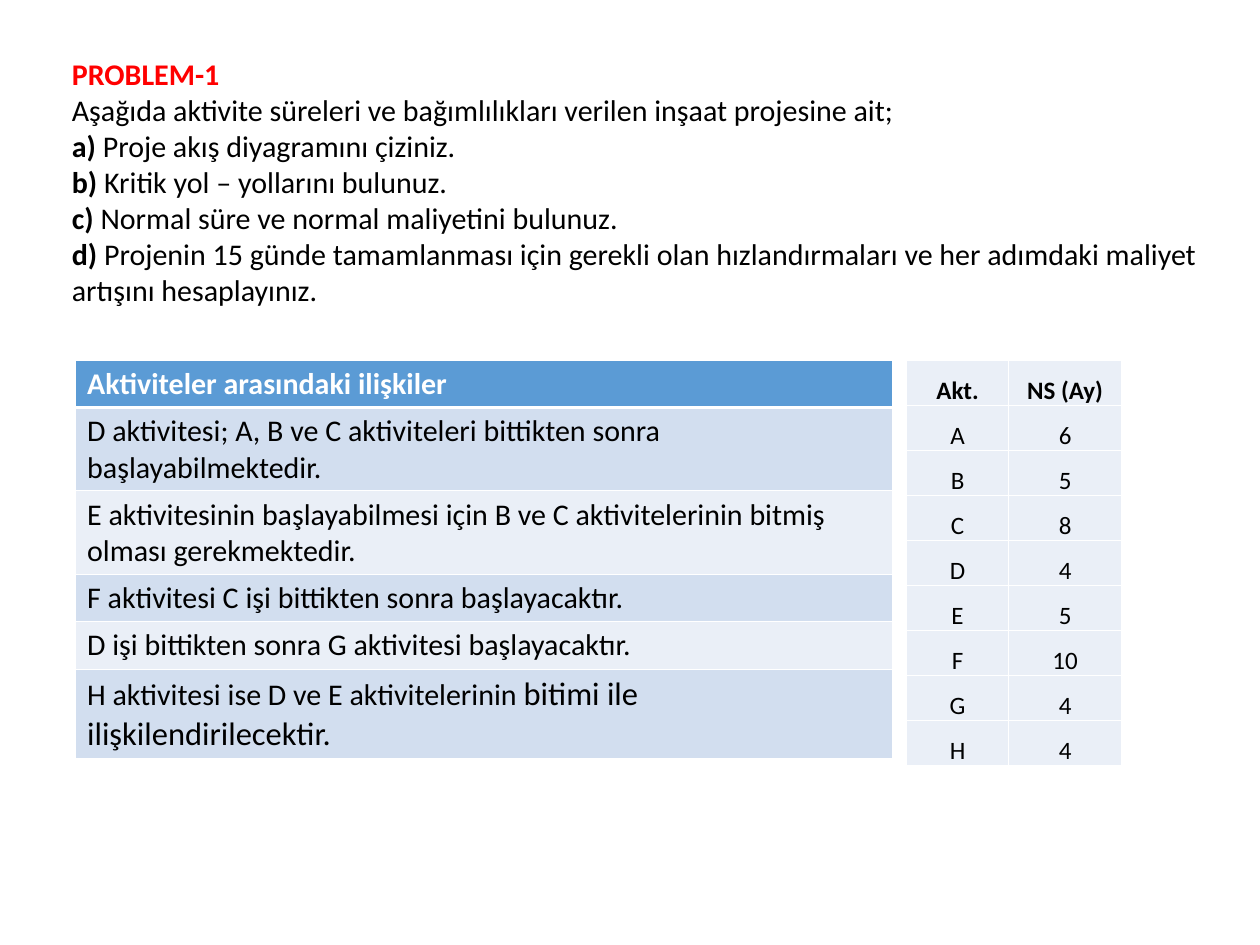
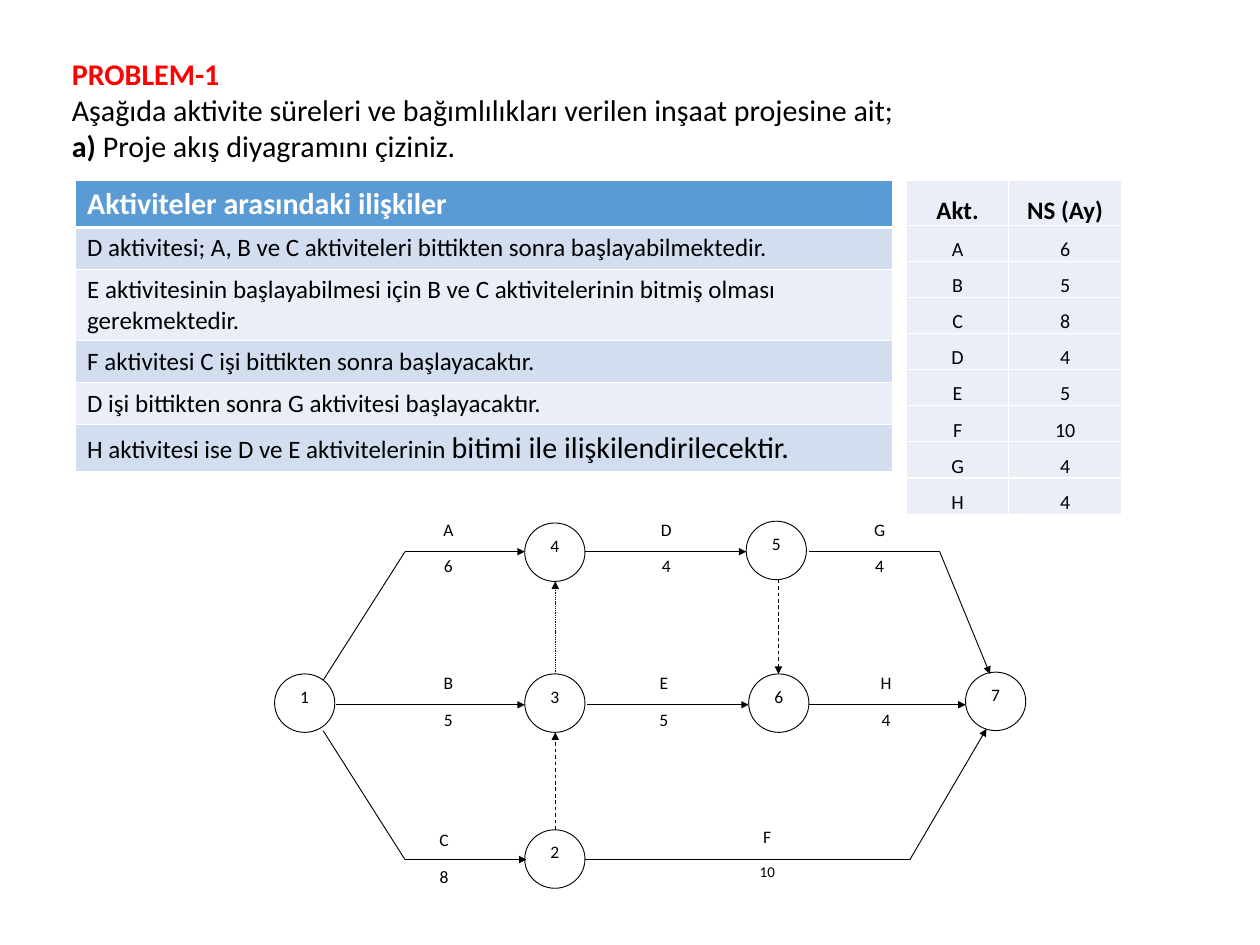
from lxml import etree
from pptx import Presentation
from pptx import util as u
from pptx.dml.color import RGBColor
from pptx.enum import dml, shapes, text
from pptx.oxml.ns import qn

FONT = "Calibri"
COLORS = {
    "red": "FF0000",
    "black": "000000",
    "white": "FFFFFF",
    "header": "5B9BD5",
    "band": "D2DEEF",
    "pale": "EAEFF7",
}
TITLE = "PROBLEM-1"
INTRO = "Aşağıda aktivite süreleri ve bağımlılıkları verilen inşaat projesine ait;"
QUESTIONS = [
    ("a) ", "Proje akış diyagramını çiziniz."),
    ("b) ", "Kritik yol – yollarını bulunuz."),
    ("c) ", "Normal süre ve normal maliyetini bulunuz."),
    ("d) ", "Projenin 15 günde tamamlanması için gerekli olan hızlandırmaları "
            "ve her adımdaki maliyet artışını hesaplayınız."),
]
RELATIONS = [
    ("Aktiviteler arasındaki ilişkiler",),
    ("D aktivitesi; A, B ve C aktiviteleri bittikten sonra başlayabilmektedir.",),
    ("E aktivitesinin başlayabilmesi için B ve C aktivitelerinin bitmiş olması "
     "gerekmektedir.",),
    ("F aktivitesi C işi bittikten sonra başlayacaktır.",),
    ("D işi bittikten sonra G aktivitesi başlayacaktır.",),
    ("H aktivitesi ise D ve E aktivitelerinin ", "bitimi ile ilişkilendirilecektir."),
]
DURATIONS = {"A": 6, "B": 5, "C": 8, "D": 4, "E": 5, "F": 10, "G": 4, "H": 4}

NODE_WIDTH, NODE_HEIGHT = 1.7, 1.65
NODES = {
    "1": (7.75, 19.02),
    "2": (14.81, 23.42),
    "3": (14.81, 19.02),
    "4": (14.81, 14.76),
    "5": (21.06, 14.71),
    "6": (21.13, 19.02),
    "7": (27.25, 18.97),
}
TOP, MIDDLE, BOTTOM = 15.57, 19.89, 24.26
BEND = 11.43
PLAIN_LINES = [
    (9.12, 19.2, BEND, TOP),
    (9.12, 20.62, BEND, BOTTOM),
    (16.51, BOTTOM, 25.68, BOTTOM),
    (22.83, TOP, 26.52, TOP),
]
ARROWS = [
    (BEND, TOP, 14.81, TOP),
    (9.47, MIDDLE, 14.81, MIDDLE),
    (BEND, BOTTOM, 14.86, BOTTOM),
    (16.51, TOP, 21.06, TOP),
    (16.58, MIDDLE, 21.13, MIDDLE),
    (22.83, MIDDLE, 27.25, MIDDLE),
    (25.68, BOTTOM, 27.84, 20.57),
    (26.52, TOP, 27.94, 19.02),
]
DUMMY_ARROWS = [
    (15.67, 23.42, 15.67, 20.67, 0.75),
    (15.67, 19.02, 15.67, 16.41, 0.25),
    (21.97, 16.36, 21.97, 19.02, 0.75),
]
ACTIVITY_LABELS = {
    "A": (11.4, 14.43),
    "B": (11.4, 18.75),
    "C": (11.28, 23.19),
    "D": (17.55, 14.43),
    "E": (17.48, 18.75),
    "F": (20.4, 23.11),
    "G": (23.57, 14.43),
    "H": (23.75, 18.75),
}


def rgb(name):
    """Return the named colour."""
    return RGBColor.from_string(COLORS[name])


def style_paragraph(para, size, color="black", bold=False):
    """Set the font of a paragraph."""
    para.font.name = FONT
    para.font.size = u.Pt(size)
    para.font.bold = bold
    para.font.color.rgb = rgb(color)


def space_paragraph(para, line_spacing):
    """Centre a paragraph and set its spacing."""
    para.alignment = text.PP_ALIGN.CENTER
    para.line_spacing = line_spacing
    para.space_after = u.Pt(10)


def add_problem(page, questions, height):
    """Add the problem title, its introduction and the questions."""
    box = page.shapes.add_textbox(u.Cm(1.78), u.Cm(1.45), u.Cm(32.77), u.Cm(height))
    frame = box.text_frame
    frame.word_wrap = True
    frame.auto_size = text.MSO_AUTO_SIZE.SHAPE_TO_FIT_TEXT
    title = frame.paragraphs[0]
    title.text = TITLE
    title.alignment = text.PP_ALIGN.JUSTIFY
    style_paragraph(title, 24, "red", True)
    intro = frame.add_paragraph()
    intro.text = INTRO
    style_paragraph(intro, 24)
    for letter, question in questions:
        para = frame.add_paragraph()
        style_paragraph(para, 24)
        span = para.add_run()
        span.text = letter
        span.font.bold = True
        para.add_run().text = question


def set_borders(cell, top=1, bottom=1):
    """Give a cell white borders, with widths in points."""
    properties = cell._tc.get_or_add_tcPr()
    widths = {"lnL": 1, "lnR": 1, "lnT": top, "lnB": bottom}
    for index, (tag, width) in enumerate(widths.items()):
        line = etree.Element(qn(f"a:{tag}"), w=str(u.Pt(width)))
        fill = etree.SubElement(line, qn("a:solidFill"))
        etree.SubElement(fill, qn("a:srgbClr"), val=COLORS["white"])
        properties.insert(index, line)


def format_cell(cell, color, side, edge):
    """Set the fill and the margins of a cell."""
    cell.fill.solid()
    cell.fill.fore_color.rgb = rgb(color)
    cell.margin_left = cell.margin_right = u.Cm(side)
    cell.margin_top = cell.margin_bottom = u.Cm(edge)


def add_grid(page, left, top, widths, heights):
    """Add a table with the given column widths and row heights."""
    frame = page.shapes.add_table(len(heights), len(widths), u.Cm(left), u.Cm(top),
                                  u.Cm(sum(widths)), u.Cm(sum(heights)))
    table = frame.table
    table.horz_banding = False
    for column, width in zip(table.columns, widths):
        column.width = u.Cm(width)
    for row, height in zip(table.rows, heights):
        row.height = u.Cm(height)
    return table


def add_relations(page, top, heights, size, accent_size):
    """Add the table of relations between activities."""
    table = add_grid(page, 2.13, top, [23.06], heights)
    for index, parts in enumerate(RELATIONS):
        cell = table.cell(index, 0)
        is_header = index == 0
        color = "header" if is_header else ("pale", "band")[index % 2]
        format_cell(cell, color, 0.33, 0.16)
        set_borders(cell, 3 if index == 1 else 1, 3 if is_header else 1)
        para = cell.text_frame.paragraphs[0]
        if is_header:
            style_paragraph(para, 24, "white", True)
        else:
            style_paragraph(para, size)
        for part in parts:
            span = para.add_run()
            span.text = part
            if part != parts[0]:
                span.font.size = u.Pt(accent_size)


def add_durations(page, top, header_height, row_height, size):
    """Add the table of activity durations."""
    rows = [("Akt.", "NS (Ay)"), *DURATIONS.items()]
    heights = [header_height] + [row_height] * len(DURATIONS)
    table = add_grid(page, 25.58, top, [2.89, 3.18], heights)
    for row_index, row in enumerate(rows):
        for column_index, value in enumerate(row):
            cell = table.cell(row_index, column_index)
            format_cell(cell, "pale", 0.36, 0)
            set_borders(cell)
            cell.vertical_anchor = text.MSO_ANCHOR.MIDDLE
            para = cell.text_frame.paragraphs[0]
            para.text = str(value)
            space_paragraph(para, 1.5)
            is_header = row_index == 0
            style_paragraph(para, 20 if is_header else size, bold=is_header)


def add_node(page, number, left, top):
    """Add a numbered event circle."""
    node = page.shapes.add_shape(shapes.MSO_SHAPE.OVAL, u.Cm(left), u.Cm(top),
                                 u.Cm(NODE_WIDTH), u.Cm(NODE_HEIGHT))
    node.shadow.inherit = False
    node.fill.solid()
    node.fill.fore_color.rgb = rgb("white")
    node.line.color.rgb = rgb("black")
    node.line.width = u.Pt(0.75)
    frame = node.text_frame
    frame.margin_left = frame.margin_right = frame.margin_top = 0
    frame.margin_bottom = u.Cm(0.4)
    frame.vertical_anchor = text.MSO_ANCHOR.MIDDLE
    para = frame.paragraphs[0]
    para.text = number
    para.alignment = text.PP_ALIGN.CENTER
    style_paragraph(para, 14)


def add_line(page, start_x, start_y, end_x, end_y, width=0.75, arrow=False, dashed=False):
    """Add a straight line, optionally dashed or with an arrowhead."""
    line = page.shapes.add_connector(shapes.MSO_CONNECTOR.STRAIGHT, u.Cm(start_x),
                                     u.Cm(start_y), u.Cm(end_x), u.Cm(end_y))
    line.line.color.rgb = rgb("black")
    line.line.width = u.Pt(width)
    if dashed:
        line.line.dash_style = dml.MSO_LINE.DASH
    if arrow:
        etree.SubElement(line.line._get_or_add_ln(), qn("a:tailEnd"), type="triangle")
    etree.SubElement(line._element.spPr, qn("a:effectLst"))


def add_activity_label(page, activity, left, top):
    """Add an activity letter above its duration."""
    box = page.shapes.add_textbox(u.Cm(left), u.Cm(top), u.Cm(2.51), u.Cm(3.3))
    frame = box.text_frame
    frame.word_wrap = True
    duration = DURATIONS[activity]
    frame.text = f"{activity}\n{duration}"
    for para in frame.paragraphs:
        space_paragraph(para, 1.15)
        style_paragraph(para, 12 if para.text == "10" else 14)


def add_network(page):
    """Add the activity network diagram."""
    for number, place in NODES.items():
        add_node(page, number, *place)
    for ends in PLAIN_LINES:
        add_line(page, *ends)
    for ends in ARROWS:
        add_line(page, *ends, arrow=True)
    for ends in DUMMY_ARROWS:
        add_line(page, *ends, arrow=True, dashed=True)
    for activity, place in ACTIVITY_LABELS.items():
        add_activity_label(page, activity, *place)


def main():
    """Build the problem slide and the network slide."""
    deck = Presentation()
    deck.slide_width, deck.slide_height = u.Cm(35.56), u.Cm(26.67)
    blank = deck.slide_layouts[6]

    problem = deck.slides.add_slide(blank)
    add_problem(problem, QUESTIONS, 7.4)
    add_relations(problem, 10.16, [1.34, 2.35, 2.35, 1.34, 1.34, 2.52], 24, 26)
    add_durations(problem, 10.16, 1.27, 1.27, 20)

    solution = deck.slides.add_slide(blank)
    add_problem(solution, QUESTIONS[:1], 3.33)
    add_relations(solution, 5.08, [1.34, 1.18, 2.02, 1.18, 1.18, 1.32], 20, 24)
    add_durations(solution, 5.08, 1.25, 1.02, 16)
    add_network(solution)

    deck.save("out.pptx")


if __name__ == "__main__":
    main()
